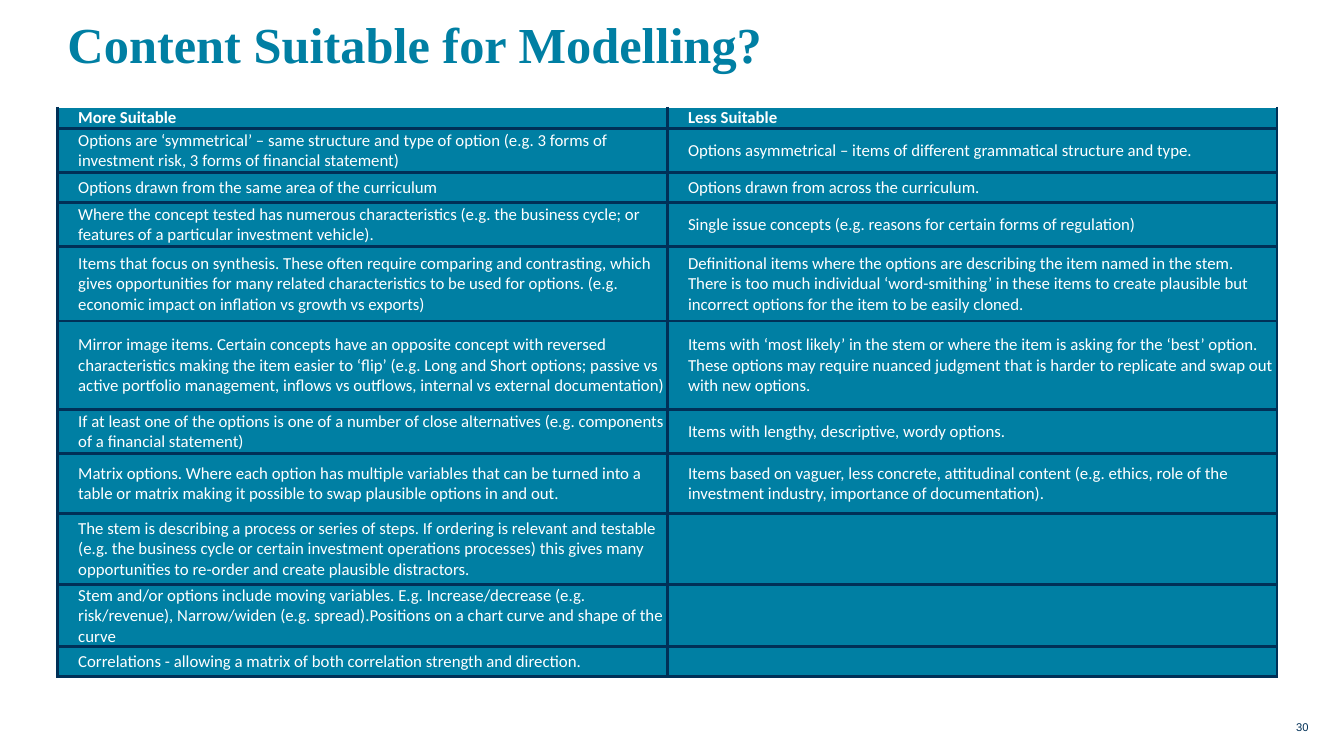
from pptx import Presentation
from pptx.dml.color import RGBColor
from pptx.enum.text import MSO_ANCHOR, MSO_AUTO_SIZE, PP_ALIGN
from pptx.oxml import parse_xml
from pptx.oxml.ns import nsdecls
from pptx.util import Pt

TEAL = RGBColor(0x00, 0x7F, 0xA3)
NAVY = RGBColor(0x00, 0x30, 0x57)
WHITE = RGBColor(0xFF, 0xFF, 0xFF)

# Row height in points, left cell, right cell
ROWS = [
    (14.7, "More Suitable", "Less Suitable"),
    (31.7, "Options are ‘symmetrical’ – same structure and type of option (e.g. 3 forms of "
           "investment risk, 3 forms of financial statement)",
     "Options asymmetrical – items of different grammatical structure and type."),
    (21.2, "Options drawn from the same area of the curriculum",
     "Options drawn from across the curriculum."),
    (31.7, "Where the concept tested has numerous characteristics (e.g. the business cycle; or "
           "features of a particular investment vehicle).",
     "Single issue concepts (e.g. reasons for certain forms of regulation)"),
    (53.2, "Items that focus on synthesis. These often require comparing and contrasting, which "
           "gives opportunities for many related characteristics to be used for options. (e.g. "
           "economic impact on inflation vs growth vs exports)",
     "Definitional items where the options are describing the item named in the stem. "
     "There is too much individual ‘word-smithing’ in these items to create plausible but "
     "incorrect options for the item to be easily cloned."),
    (63.2, "Mirror image items. Certain concepts have an opposite concept with reversed "
           "characteristics making the item easier to ‘flip’ (e.g. Long and Short options; passive vs "
           "active portfolio management, inflows vs outflows, internal vs external documentation)",
     "Items with ‘most likely’ in the stem or where the item is asking for the ‘best’ option. "
     "These options may require nuanced judgment that is harder to replicate and swap out "
     "with new options."),
    (31.7, "If at least one of the options is one of a number of close alternatives (e.g. components "
           "of a financial statement)",
     "Items with lengthy, descriptive, wordy options."),
    (42.5, "Matrix options. Where each option has multiple variables that can be turned into a "
           "table or matrix making it possible to swap plausible options in and out.",
     "Items based on vaguer, less concrete, attitudinal content (e.g. ethics, role of the "
     "investment industry, importance of documentation)."),
    (50.8, "The stem is describing a process or series of steps. If ordering is relevant and testable "
           "(e.g. the business cycle or certain investment operations processes) this gives many "
           "opportunities to re-order and create plausible distractors.", ""),
    (44.6, "Stem and/or options include moving variables. E.g. Increase/decrease (e.g. "
           "risk/revenue), Narrow/widen (e.g. spread).Positions on a chart curve and shape of the "
           "curve", ""),
    (21.2, "Correlations - allowing a matrix of both correlation strength and direction.", ""),
]


def set_font(paragraph, name, size, color, bold=False):
    font = paragraph.font
    font.name, font.size, font.bold = name, Pt(size), bold
    font.color.rgb = color


def set_borders(cell, top_color, top_width):
    sides = [("lnL", NAVY, 2.25), ("lnR", NAVY, 2.25),
             ("lnT", top_color, top_width), ("lnB", NAVY, 2.25)]
    properties = cell._tc.get_or_add_tcPr()
    for position, (side, color, width) in enumerate(sides):
        properties.insert(position, parse_xml(
            f'<a:{side} {nsdecls("a")} w="{int(Pt(width))}"><a:solidFill>'
            f'<a:srgbClr val="{color}"/></a:solidFill></a:{side}>'))


deck = Presentation()
deck.slide_width, deck.slide_height = Pt(960), Pt(540)
page = deck.slides.add_slide(deck.slide_layouts[5])

# Title
title = page.shapes.title
title.left, title.top, title.width, title.height = Pt(41), Pt(8.6), Pt(871.2), Pt(45.4)
title.text_frame.text = "Content Suitable for Modelling?"
title.text_frame.auto_size = MSO_AUTO_SIZE.NONE
title.text_frame.vertical_anchor = MSO_ANCHOR.MIDDLE
heading = title.text_frame.paragraphs[0]
heading.alignment = PP_ALIGN.LEFT
set_font(heading, "Times New Roman", 36, TEAL, bold=True)

# Suitability table
table_height = sum(height for height, *_ in ROWS)
table = page.shapes.add_table(len(ROWS), 2, Pt(41), Pt(76.4), Pt(871.2), Pt(table_height)).table
table.first_row = table.horz_banding = False
for row_index, (height, *texts) in enumerate(ROWS):
    table.rows[row_index].height = Pt(height)
    is_header = row_index == 0
    for column_index, text in enumerate(texts):
        cell = table.cell(row_index, column_index)
        cell.text = text
        cell.vertical_anchor = MSO_ANCHOR.MIDDLE
        cell.margin_left = cell.margin_right = cell.margin_top = Pt(0.5)
        cell.margin_bottom = Pt(0)
        cell.fill.solid()
        cell.fill.fore_color.rgb = TEAL
        set_borders(cell, *((WHITE, 0.25) if is_header else (NAVY, 2.25)))
        para = cell.text_frame.paragraphs[0]
        para._p.get_or_add_pPr().set("marL", str(int(Pt(14.4))))
        set_font(para, "Calibri", 12, WHITE, bold=is_header)

# Page number
box = page.shapes.add_textbox(Pt(918.7), Pt(511.2), Pt(25.2), Pt(15.8))
box.text_frame.text = "30"
set_font(box.text_frame.paragraphs[0], "Arial", 8, NAVY)

deck.save("out.pptx")
